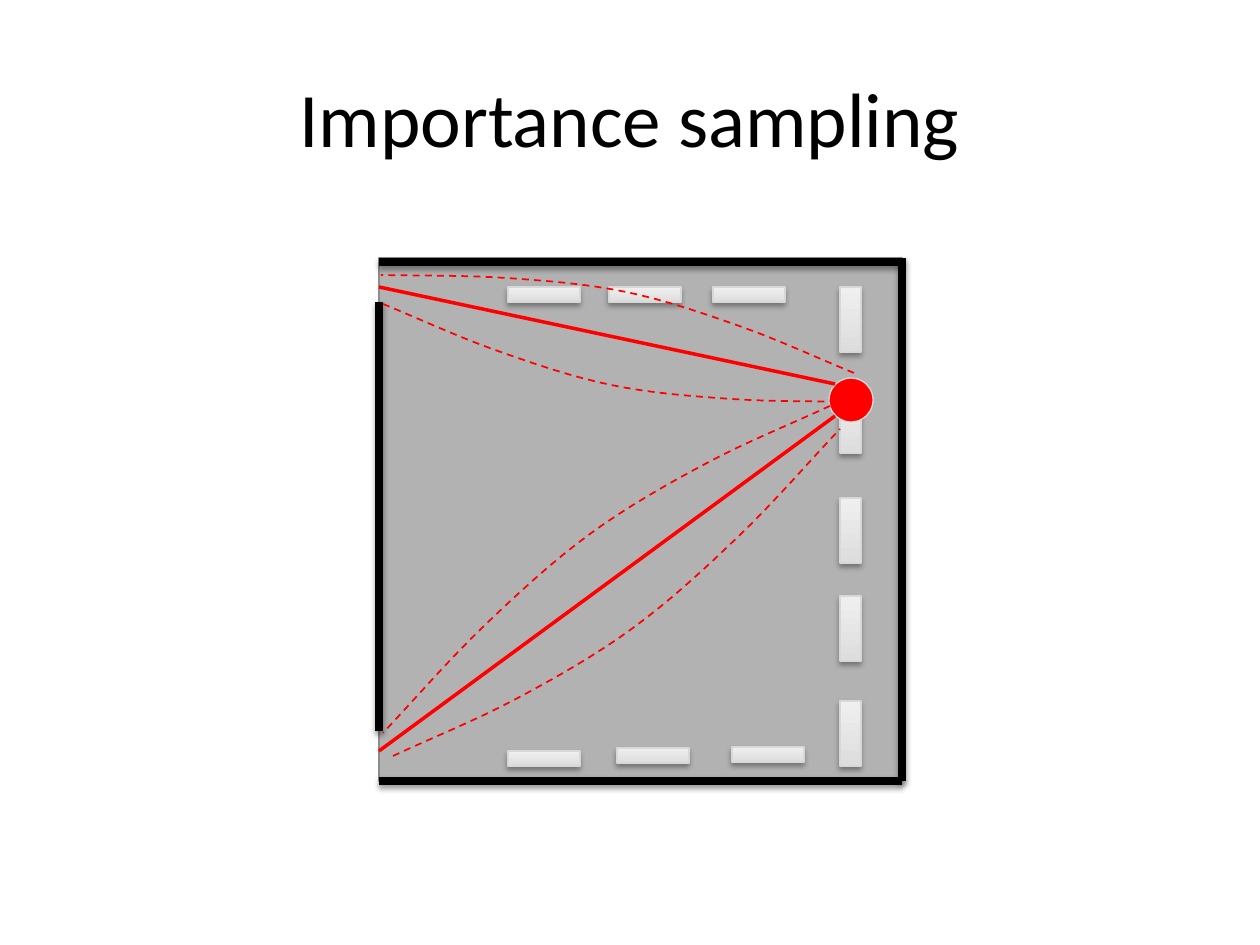
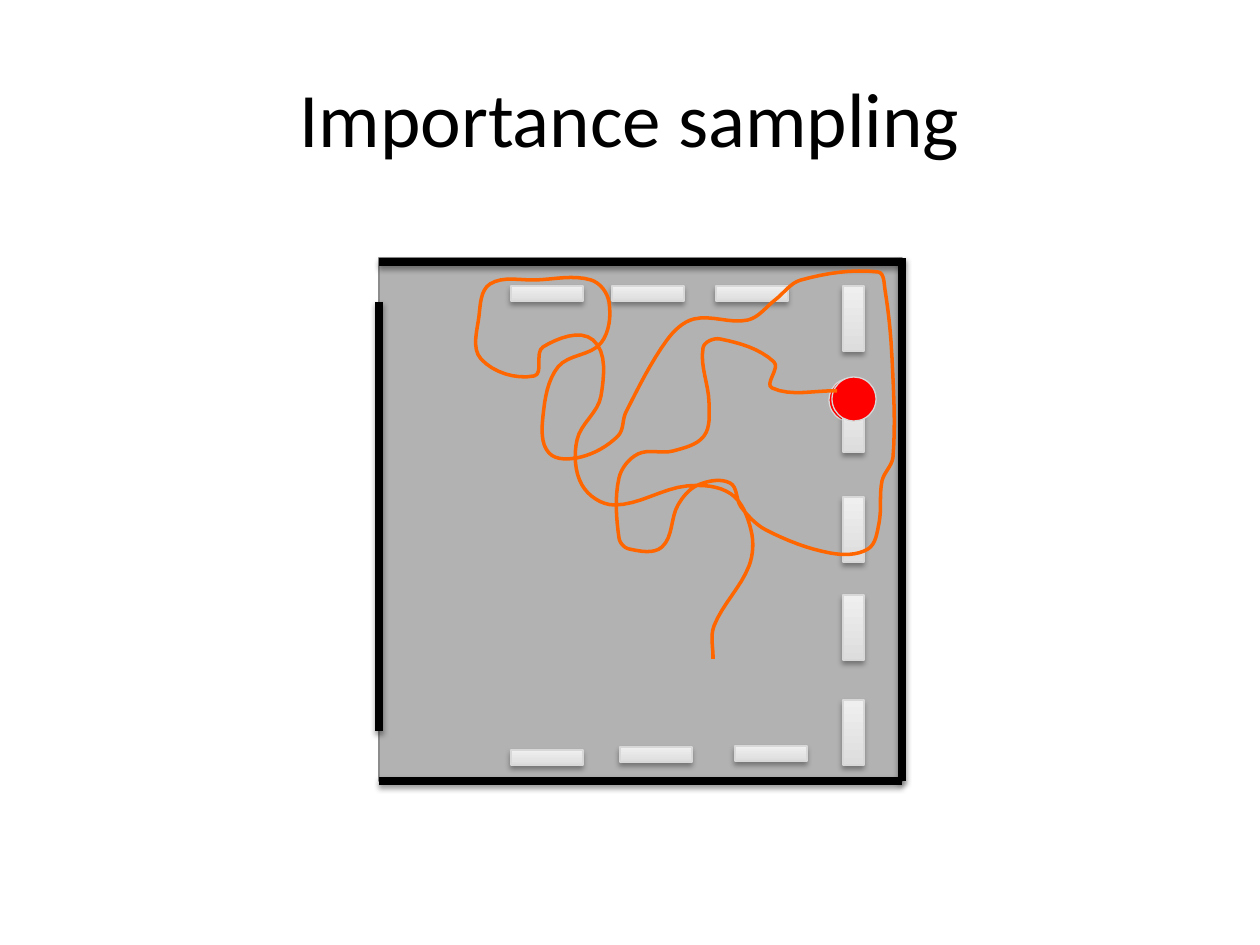
from math import dist

from lxml import etree
from pptx import Presentation
from pptx import util as u
from pptx.dml.color import RGBColor
from pptx.enum import dml, shapes, text
from pptx.oxml import ns

PX = u.Inches(1) / 126
ROOM = (379, 258, 523, 523)
TITLE_BOX = (63, 38, 1134, 157)
TITLE_FONT = {"name": "Calibri", "size": u.Pt(44)}
BLACK, RED, ORANGE = "000000", "FF0000", "FF6600"
FLOOR, FLOOR_EDGE, SHELF_EDGE = "B2B2B2", "8C8C8C", "D8D8D8"
SHELF_STOPS = ("DDDDDD", "EFEFEF")
WALL_SHADOW = {"alpha": 38, "blur": 3.1, "dist": 1.6}
SHELF_SHADOW = {"alpha": 35, "blur": 3.1, "dist": 1.8}

SIDE_SHELVES = [(461, y, 21, 65) for y in (29, 130, 240, 338, 443)]
TOP_SHELVES = [(x, 29, 72, 15) for x in (129, 230, 334)]
BOTTOM_SHELVES = [(x, y, 72, 15) for x, y in ((129, 493), (238, 490), (353, 489))]
SHELVES = SIDE_SHELVES + TOP_SHELVES + BOTTOM_SHELVES
READER = (450, 120, 44, 44)
SHIFT = (3, -1)

RAYS = [(456, 126, 0, 29), (456, 158, 0, 493)]
LOWER_BEAM = [(451, 148), (328, 205), (211, 276), (104, 369), (4, 475)]
UPPER_BEAM = [(475, 115), (363, 69), (247, 34), (127, 20), (2, 17)]
BEAMS = [(LOWER_BEAM, (465, 646)), (UPPER_BEAM, (479, 161))]
WALK = [
    (458, 133), (393, 130), (395, 104), (341, 81), (324, 90), (330, 145),
    (325, 178), (294, 193), (259, 196), (240, 220), (240, 280), (250, 291),
    (283, 289), (299, 247), (319, 227), (351, 225), (362, 249), (387, 272),
    (451, 295), (489, 291), (500, 265), (503, 223), (514, 199), (513, 100),
    (506, 32), (499, 14), (422, 22), (396, 42), (369, 62), (315, 61),
    (288, 82), (247, 154), (239, 178), (202, 199), (170, 195), (164, 158),
    (179, 109), (222, 85), (230, 44), (212, 22), (157, 22), (111, 26),
    (100, 58), (102, 101), (155, 118), (164, 89), (214, 82), (222, 138),
    (198, 182), (203, 227), (235, 247), (308, 228), (352, 236), (372, 272),
    (370, 308), (335, 368), (334, 401),
]


def emu(*lengths):
    """Turn px lengths into EMU."""
    return [u.Emu(round(length * PX)) for length in lengths]


def color(code):
    """Give the colour for a hex string."""
    return RGBColor.from_string(code)


def apply(target, values):
    """Set the attributes of target from a dict."""
    for name, value in values.items():
        setattr(target, name, value)


def moved(box, dx, dy):
    """Shift the first point of a box."""
    return (box[0] + dx, box[1] + dy, *box[2:])


def style_line(line, code, width, dash=None):
    """Colour and size an outline."""
    line.color.rgb = color(code)
    apply(line, {"width": u.Pt(width), "dash_style": dash})


def set_shadow(item, shadow=None):
    """Replace the theme shadow by the given one, or by none."""
    effects = etree.SubElement(item._element.spPr, ns.qn("a:effectLst"))
    if shadow:
        outer = etree.SubElement(
            effects, ns.qn("a:outerShdw"), blurRad=str(u.Pt(shadow["blur"])),
            dist=str(u.Pt(shadow["dist"])), dir="5400000", rotWithShape="0")
        tint = etree.SubElement(outer, ns.qn("a:srgbClr"), val=BLACK)
        etree.SubElement(tint, ns.qn("a:alpha"), val=str(shadow["alpha"] * 1000))


def add_block(page, kind, box, fill, edge, shadow=None):
    """Add a preset shape with a plain fill, or a gradient for a tuple."""
    block = page.shapes.add_shape(kind, *emu(*moved(box, *ROOM[:2])))
    if isinstance(fill, tuple):
        block.fill.gradient()
        block.fill.gradient_angle = 90
        for position, (stop, code) in enumerate(zip(block.fill.gradient_stops, fill)):
            stop.color.rgb = color(code)
            stop.position = position
    else:
        block.fill.solid()
        block.fill.fore_color.rgb = color(fill)
    style_line(block.line, edge, 0.75)
    set_shadow(block, shadow)


def add_straight(page, ends, code, width, shadow=None):
    """Add a straight connector inside the room."""
    start, end = (moved(point, *ROOM[:2]) for point in (ends[:2], ends[2:]))
    line = page.shapes.add_connector(
        shapes.MSO_CONNECTOR.STRAIGHT, *emu(*start, *end))
    style_line(line.line, code, width)
    set_shadow(line, shadow)


def add_trace(page, points, code, width, dash=None):
    """Add a smooth open outline through points inside the room."""
    start, *rest = [emu(*moved(point, *ROOM[:2])) for point in smooth(points)]
    builder = page.shapes.build_freeform(*start)
    builder.add_line_segments(rest, close=False)
    trace = builder.convert_to_shape()
    trace.fill.background()
    style_line(trace.line, code, width, dash)
    set_shadow(trace)


def smooth(points, steps=8):
    """Sample cubic curves whose handles follow the neighbouring points."""
    padded = [points[0], *points, points[-1]]
    curve = [points[0]]
    for a, b, c, d in zip(padded, padded[1:], padded[2:], padded[3:]):
        reach = dist(b, c) / 3
        first = [q + (r - p) * reach / dist(a, c) for p, q, r in zip(a, b, c)]
        second = [r - (s - q) * reach / dist(b, d) for q, r, s in zip(b, c, d)]
        for step in range(1, steps + 1):
            t = step / steps
            v = 1 - t
            curve.append(tuple(
                v**3 * p + 3 * v * v * t * q + 3 * v * t * t * r + t**3 * s
                for p, q, r, s in zip(b, first, second, c)))
    return curve


def add_walls(page):
    """Add the floor and its four walls."""
    width, height = ROOM[2:]
    add_block(page, shapes.MSO_SHAPE.RECTANGLE, (0, 0, width, height), FLOOR, FLOOR_EDGE)
    walls = [(0, 44, 0, 473), (width, 0, width, height),
             (0, height, width, height), (0, 4, width, 4)]
    for wall in walls:
        add_straight(page, wall, BLACK, 4.5, WALL_SHADOW)


def add_page(deck):
    """Add a titled slide with the empty room."""
    page = deck.slides.add_slide(deck.slide_layouts[5])
    title = page.shapes.title
    apply(title, dict(zip(("left", "top", "width", "height"), emu(*TITLE_BOX))))
    title.text_frame.vertical_anchor = text.MSO_ANCHOR.MIDDLE
    para = title.text_frame.paragraphs[0]
    para.alignment = text.PP_ALIGN.CENTER
    span = para.add_run()
    span.text = "Importance sampling"
    apply(span.font, TITLE_FONT)
    span.font.color.rgb = color(BLACK)
    add_walls(page)
    return page


def add_shelves(page, dx=0, dy=0):
    """Add the shelves along three walls."""
    for shelf in SHELVES:
        add_block(page, shapes.MSO_SHAPE.RECTANGLE, moved(shelf, dx, dy),
                  SHELF_STOPS, SHELF_EDGE, SHELF_SHADOW)


def add_reader(page, dx=0, dy=0):
    """Add the red dot."""
    add_block(page, shapes.MSO_SHAPE.OVAL, moved(READER, dx, dy), RED, SHELF_EDGE)


def add_beam_page(deck):
    """Build the slide with rays to both openings."""
    page = add_page(deck)
    add_shelves(page)
    add_reader(page)
    for ray in RAYS:
        add_straight(page, ray, RED, 2)
    for edge, (across, down) in BEAMS:
        opposite = [(across - x, down - y) for x, y in edge]
        for side in (edge, opposite):
            add_trace(page, side, RED, 1, dml.MSO_LINE.DASH)


def add_walk_page(deck):
    """Build the slide with the wandering path."""
    page = add_page(deck)
    add_reader(page)
    add_shelves(page, *SHIFT)
    add_reader(page, *SHIFT)
    add_trace(page, WALK, ORANGE, 2)


def main():
    """Build and save the deck."""
    deck = Presentation()
    apply(deck, {"slide_width": u.Inches(10), "slide_height": u.Inches(7.5)})
    add_beam_page(deck)
    add_walk_page(deck)
    deck.save("out.pptx")


if __name__ == "__main__":
    main()
